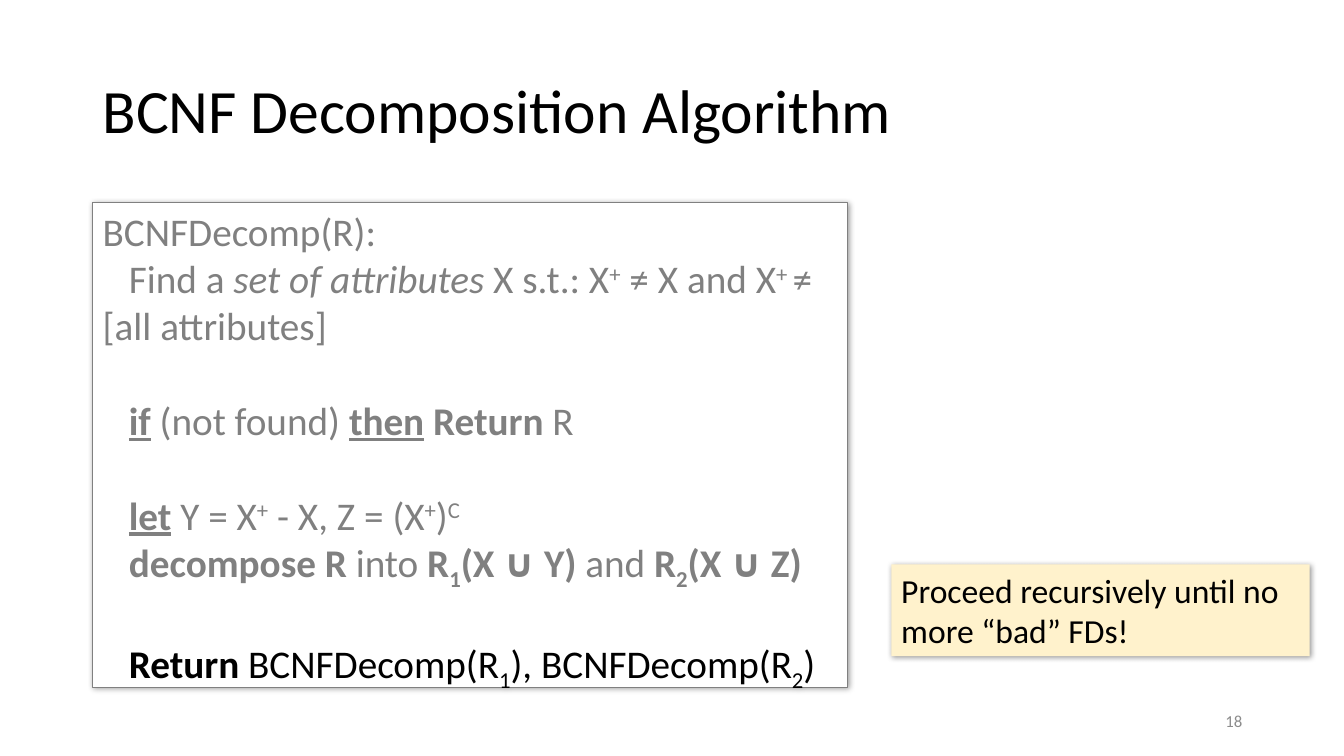
from dataclasses import dataclass

from lxml.etree import SubElement
from pptx import Presentation
from pptx.dml.color import RGBColor
from pptx.enum.shapes import MSO_SHAPE
from pptx.enum.text import MSO_ANCHOR, MSO_AUTO_SIZE, PP_ALIGN
from pptx.oxml.ns import qn
from pptx.shapes.autoshape import Shape
from pptx.util import Inches, Pt

FONT = "Calibri"
BLACK, GRAY = "000000", "808080"
GAP = 34  # height of one line of code, in points
STEP = 0.26  # indent of the code, in inches


@dataclass
class Run:
    text: str
    bold: bool = False
    slant: bool = False
    under: bool = False
    base: int = 0  # percent: positive raises, negative lowers


@dataclass
class Line:
    runs: list[Run]
    step: float = STEP
    gap: int = 0
    color: str = GRAY


@dataclass
class Panel:
    area: tuple[float, float, float, float]
    fill: str
    edge: str | None
    size: int
    lines: list[Line]


def paint(code: str) -> RGBColor:
    return RGBColor.from_string(code)


def bold(text: str) -> Run:
    return Run(text, bold=True)


def key(text: str) -> Run:
    return Run(text, bold=True, under=True)


def sup(text: str) -> Run:
    return Run(text, base=30)


def sub(text: str, heavy: bool = False) -> Run:
    return Run(text, bold=heavy, base=-25)


def plain(text: str, color: str = BLACK) -> list[Line]:
    return [Line([Run(text)], step=0, color=color)]


def write(box: Shape, lines: list[Line], *, size: int,
          align: PP_ALIGN = PP_ALIGN.LEFT,
          anchor: MSO_ANCHOR = MSO_ANCHOR.TOP,
          space: float = 1.0, grow: bool = False) -> None:
    frame = box.text_frame
    frame.word_wrap = True
    frame.vertical_anchor = anchor
    frame.auto_size = MSO_AUTO_SIZE.SHAPE_TO_FIT_TEXT if grow else MSO_AUTO_SIZE.NONE
    for spot, line in enumerate(lines):
        para = frame.add_paragraph() if spot else frame.paragraphs[0]
        para.alignment = align
        para.line_spacing = space
        para.space_before = Pt(line.gap)
        props = para._p.get_or_add_pPr()
        props.set("marL", "0")
        props.set("indent", str(Inches(line.step)))
        for part in line.runs:
            run = para.add_run()
            run.text = part.text
            font = run.font
            font.name, font.size = FONT, Pt(size)
            font.bold, font.italic, font.underline = part.bold, part.slant, part.under
            font.color.rgb = paint(line.color)
            if part.base:
                run._r.get_or_add_rPr().set("baseline", str(part.base * 1000))


def shade(shape: Shape) -> None:
    shape.shadow.inherit = False
    effects = shape._element.spPr.find(qn("a:effectLst"))
    outer = SubElement(effects, qn("a:outerShdw"), blurRad=str(Pt(4)),
                       dist=str(Pt(1)), dir=str(45 * 60000),
                       algn="tl", rotWithShape="0")
    tint = SubElement(outer, qn("a:srgbClr"), val=BLACK)
    SubElement(tint, qn("a:alpha"), val="40000")


def build() -> None:
    deck = Presentation()
    deck.slide_width, deck.slide_height = Inches(13.33), Inches(7.5)
    shapes = deck.slides.add_slide(deck.slide_layouts[6]).shapes

    # Title and page number
    title = shapes.add_textbox(*map(Inches, (0.92, 0.4, 11.5, 1.45)))
    write(title, plain("BCNF Decomposition Algorithm"), size=44,
          anchor=MSO_ANCHOR.MIDDLE, space=0.9)
    page = shapes.add_textbox(*map(Inches, (9.42, 6.95, 3, 0.4)))
    write(page, plain("18", "8C8C8C"), size=12, align=PP_ALIGN.RIGHT,
          anchor=MSO_ANCHOR.MIDDLE)

    # Algorithm, line by line
    code = [
        Line([Run("BCNFDecomp(R):")], step=0),
        Line([Run("Find a "), Run("set of attributes ", slant=True),
              Run("X s.t.: X"), sup("+"), Run(" ≠ X and X"), sup("+ "),
              Run("≠ [all attributes]")]),
        Line([key("if"), Run(" (not found) "), key("then"),
              bold(" Return"), Run(" R")], gap=GAP),
        Line([key("let"), Run(" Y = X"), sup("+"), Run(" - X, Z = (X"),
              sup("+"), Run(")"), sup("C")], gap=GAP),
        Line([bold("decompose R"), Run(" into "), bold("R"), sub("1", True),
              bold("(X ∪ Y) "), Run("and "), bold("R"), sub("2", True),
              bold("(X ∪ Z)")]),
        Line([bold("Return "), Run("BCNFDecomp(R"), sub("1"),
              Run("), BCNFDecomp(R"), sub("2"), Run(")")],
             gap=GAP, color=BLACK),
    ]

    # Shadowed panels: the algorithm and its remark
    panels = [
        Panel((0.92, 2.01, 7.49, 4.81), "FFFFFF", GRAY, 28, code),
        Panel((8.84, 5.6, 4.15, 0.91), "FFF2CC", None, 24,
              plain("Proceed recursively until no more “bad” FDs!")),
    ]
    for panel in panels:
        box = shapes.add_shape(MSO_SHAPE.RECTANGLE, *map(Inches, panel.area))
        box.fill.solid()
        box.fill.fore_color.rgb = paint(panel.fill)
        if panel.edge:
            box.line.color.rgb = paint(panel.edge)
            box.line.width = Pt(0.75)
        else:
            box.line.fill.background()
        shade(box)
        write(box, panel.lines, size=panel.size, grow=True)

    deck.save("out.pptx")


if __name__ == "__main__":
    build()
